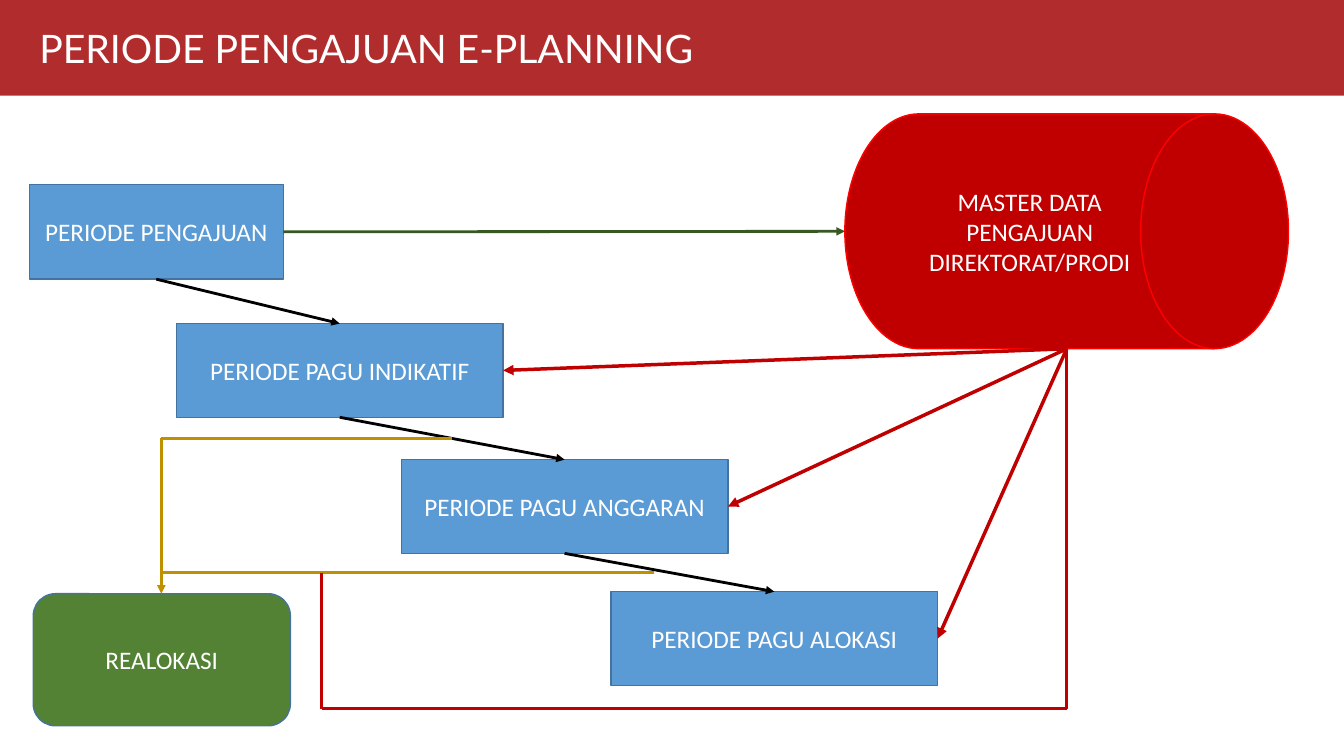
from pptx import Presentation
from pptx.dml.color import RGBColor
from pptx.enum.shapes import MSO_CONNECTOR, MSO_SHAPE
from pptx.enum.text import MSO_ANCHOR, PP_ALIGN
from pptx.oxml.ns import qn
from pptx.util import Inches, Pt
from lxml.etree import SubElement

WHITE = RGBColor(0xFF, 0xFF, 0xFF)
BLACK = RGBColor(0x00, 0x00, 0x00)
BANNER_RED = RGBColor(0xB1, 0x2D, 0x2D)
BLUE = RGBColor(0x5B, 0x9B, 0xD5)
BLUE_EDGE = RGBColor(0x43, 0x73, 0x9E)
DARK_RED = RGBColor(0xC0, 0x00, 0x00)
BRIGHT_RED = RGBColor(0xFF, 0x00, 0x00)
GREEN = RGBColor(0x54, 0x82, 0x35)
DARK_GREEN = RGBColor(0x38, 0x57, 0x23)
GOLD = RGBColor(0xBF, 0x90, 0x00)

# Connection sites of a shape
TOP, LEFT, BOTTOM, RIGHT = range(4)


def add_span(para, text, size, font):
    span = para.add_run()
    span.text = text
    span.font.size = Pt(size)
    span.font.name = font
    span.font.color.rgb = WHITE


def add_banner(page, box, text):
    title = page.shapes.title
    title.left, title.top, title.width, title.height = map(Inches, box)
    title.fill.solid()
    title.fill.fore_color.rgb = BANNER_RED
    frame = title.text_frame
    frame.word_wrap = True
    frame.vertical_anchor = MSO_ANCHOR.MIDDLE
    frame.margin_left = frame.margin_right = Inches(0.39)
    frame.margin_top = frame.margin_bottom = Inches(0.24)
    para = frame.paragraphs[0]
    para.alignment = PP_ALIGN.LEFT
    add_span(para, text, 28, "Lato")


def add_node(page, box, lines, kind=MSO_SHAPE.RECTANGLE, fill=BLUE, edge=BLUE_EDGE):
    node = page.shapes.add_shape(kind, *map(Inches, box))
    node.shadow.inherit = False
    node.fill.solid()
    node.fill.fore_color.rgb = fill
    node.line.color.rgb = edge
    node.line.width = Pt(1)
    frame = node.text_frame
    frame.word_wrap = True
    frame.vertical_anchor = MSO_ANCHOR.MIDDLE
    for index, line in enumerate(lines):
        para = frame.add_paragraph() if index else frame.paragraphs[0]
        para.alignment = PP_ALIGN.CENTER
        add_span(para, line, 18, "Calibri")
    return node


def add_line(page, start, end, color, width=2, arrow=False):
    line = page.shapes.add_connector(
        MSO_CONNECTOR.STRAIGHT, *map(Inches, (*start, *end)))
    line.line.color.rgb = color
    line.line.width = Pt(width)
    if arrow:
        SubElement(line.line._get_or_add_ln(), qn("a:tailEnd"), type="triangle")
    SubElement(line._element.spPr, qn("a:effectLst"))
    return line


def link(page, source, source_site, target, target_site, color, width=2):
    line = add_line(page, (0, 0), (1, 1), color, width, arrow=True)
    line.begin_connect(source, source_site)
    line.end_connect(target, target_site)


def add_flow(page):
    # Periods, stepping down to the right
    request = add_node(page, (0.29, 1.83, 2.52, 0.94), ["PERIODE PENGAJUAN"])
    indicative = add_node(page, (1.75, 3.21, 3.24, 0.93), ["PERIODE PAGU INDIKATIF"])
    budget = add_node(page, (3.98, 4.56, 3.24, 0.93), ["PERIODE PAGU ANGGARAN"])
    allocation = add_node(page, (6.06, 5.87, 3.24, 0.93), ["PERIODE PAGU ALOKASI"])
    periods = [request, indicative, budget, allocation]

    # Master data store
    master = add_node(page, (8.38, 1.13, 4.4, 2.33),
                      ["MASTER DATA", "PENGAJUAN DIREKTORAT/PRODI "],
                      MSO_SHAPE.FLOWCHART_DIRECT_ACCESS_STORAGE, DARK_RED, BRIGHT_RED)
    link(page, request, RIGHT, master, LEFT, DARK_GREEN)
    for period in periods[1:]:
        link(page, master, BOTTOM, period, RIGHT, DARK_RED, 2.5)

    # Order of the periods
    for earlier, later in zip(periods, periods[1:]):
        link(page, earlier, BOTTOM, later, TOP, BLACK)


def add_reallocation(page):
    add_node(page, (0.33, 5.89, 2.55, 1.31), ["REALOKASI"],
             MSO_SHAPE.ROUNDED_RECTANGLE, GREEN)

    # Branches from the period steps
    add_line(page, (4.48, 4.35), (1.6, 4.35), GOLD)
    add_line(page, (1.6, 4.35), (1.6, 5.89), GOLD, arrow=True)
    add_line(page, (6.49, 5.68), (1.6, 5.68), GOLD)

    # Return path from the master data
    corners = [(10.58, 3.46), (10.58, 7.03), (3.19, 7.03), (3.19, 5.68)]
    for start, end in zip(corners, corners[1:]):
        add_line(page, start, end, DARK_RED)


def main():
    deck = Presentation()
    deck.slide_width, deck.slide_height = Inches(13.33), Inches(7.5)
    page = deck.slides.add_slide(deck.slide_layouts[5])
    add_banner(page, (0, 0, 13.33, 0.95), "PERIODE PENGAJUAN E-PLANNING")
    add_flow(page)
    add_reallocation(page)
    deck.save("out.pptx")


if __name__ == "__main__":
    main()
